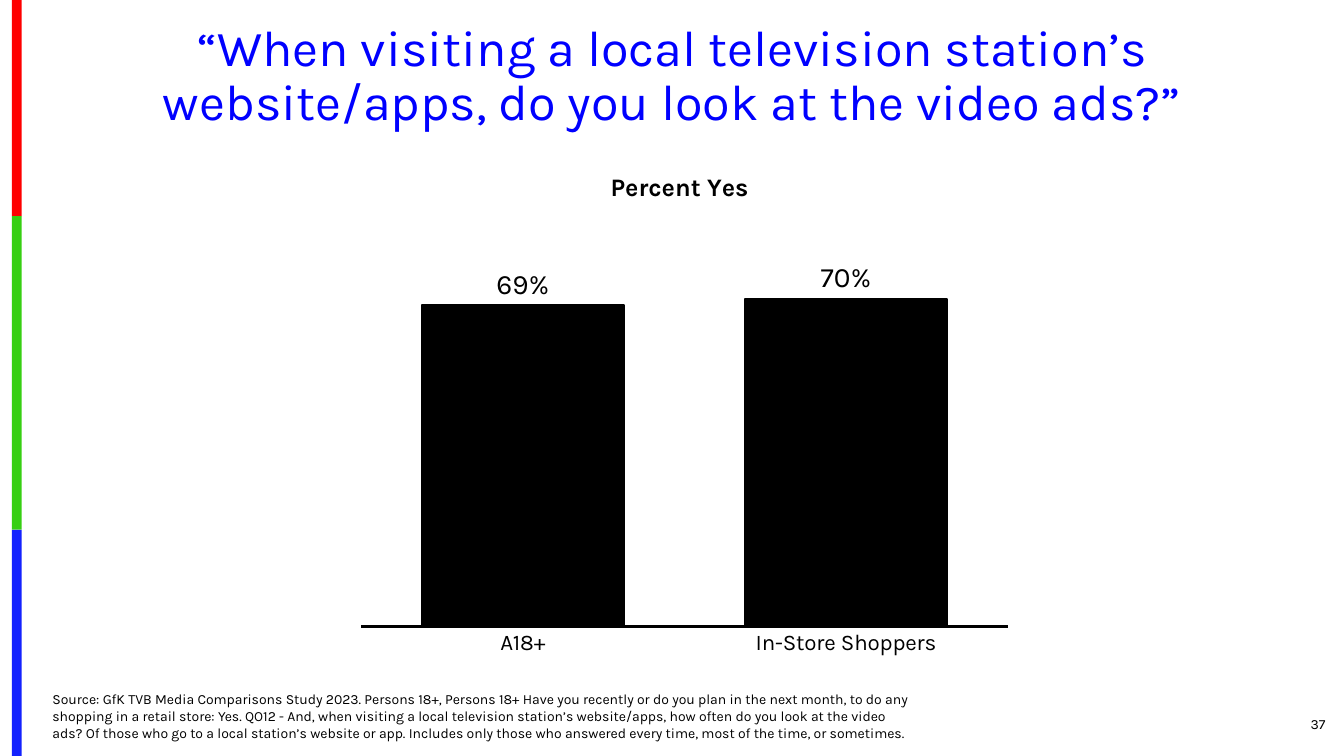
import pptx
import pptx.chart.data
import pptx.dml.color
import pptx.enum.chart
import pptx.enum.shapes
import pptx.enum.text
import pptx.oxml
import pptx.oxml.ns
import pptx.util

Cm = pptx.util.Cm
Pt = pptx.util.Pt
RGBColor = pptx.dml.color.RGBColor
Align = pptx.enum.text.PP_ALIGN
Anchor = pptx.enum.text.MSO_ANCHOR

RED = RGBColor(0xFE, 0x00, 0x00)
GREEN = RGBColor(0x36, 0xCF, 0x12)
STRIPE_BLUE = RGBColor(0x13, 0x22, 0xFE)
TITLE_BLUE = RGBColor(0x00, 0x00, 0xFF)
BLACK = RGBColor(0x00, 0x00, 0x00)
FACE = "Karla"

QUESTION = "“When visiting a local television station’s website/apps, do you look at the video ads?”"
SOURCE = (
    "Source: GfK TVB Media Comparisons Study 2023. Persons 18+, Persons 18+ "
    "Have you recently or do you plan in the next month, to do any shopping in a retail store: Yes. "
    "QO12 - And, when visiting a local television station’s website/apps, "
    "how often do you look at the video ads? "
    "Of those who go to a local station’s website or app. "
    "Includes only those who answered every time, most of the time, or sometimes."
)
PAGE = "37"
CHART_TITLE = "Percent Yes"
YES_SHARE = {"A18+": 0.69, "In-Store Shoppers": 0.7}
STRIPES = [(RED, 5.45), (GREEN, 7.9), (STRIPE_BLUE, 5.7)]

TEXTS = [
    (QUESTION, (1.17, 0.43, 31.55, 3.02), 36, TITLE_BLUE, Align.CENTER, Anchor.MIDDLE, 0.9),
    (PAGE, (30.91, 17.73, 2.74, 1.02), 10, BLACK, Align.RIGHT, Anchor.MIDDLE, 1.0),
    (SOURCE, (1.07, 17.25, 22.23, 1.55), 10, BLACK, Align.LEFT, Anchor.BOTTOM, 1.0),
]


def style(font, size, color=BLACK, bold=False):
    font.name = FACE
    font.size = Pt(size)
    font.bold = bold
    font.color.rgb = color


def add_text(slide, words, box, size, color, align, anchor, spacing):
    frame = slide.shapes.add_textbox(*map(Cm, box)).text_frame
    frame.word_wrap = True
    frame.vertical_anchor = anchor
    paragraph = frame.paragraphs[0]
    paragraph.alignment = align
    paragraph.line_spacing = spacing
    run = paragraph.add_run()
    run.text = words
    style(run.font, size, color)


def place(element, index, **settings):
    for old in element.findall(pptx.oxml.ns.qn("c:layout")):
        element.remove(old)
    entries = "".join(f'<c:{key} val="{value}"/>' for key, value in settings.items())
    element.insert(index, pptx.oxml.parse_xml(
        f'<c:layout {pptx.oxml.ns.nsdecls("c")}>'
        f"<c:manualLayout>{entries}</c:manualLayout></c:layout>"
    ))


def add_share_chart(slide):
    shares = pptx.chart.data.CategoryChartData(number_format="0%")
    shares.categories = list(YES_SHARE)
    shares.add_series("Series 1", list(YES_SHARE.values()))
    chart = slide.shapes.add_chart(
        pptx.enum.chart.XL_CHART_TYPE.COLUMN_CLUSTERED,
        Cm(8.26), Cm(3.45), Cm(17.98), Cm(14.55), shares,
    ).chart
    style(chart.font, 10)
    chart.has_legend = False
    chart.has_title = True
    heading = chart.chart_title.text_frame.paragraphs[0].add_run()
    heading.text = CHART_TITLE
    style(heading.font, 18, bold=True)
    chart.chart_title.include_in_layout = False

    groups = chart.category_axis
    groups.major_tick_mark = pptx.enum.chart.XL_TICK_MARK.NONE
    style(groups.tick_labels.font, 16)
    groups.format.line.color.rgb = BLACK
    groups.format.line.width = Pt(1.5)

    percent = chart.value_axis
    percent.minimum_scale = 0.2
    percent.maximum_scale = 0.8
    percent.has_major_gridlines = False
    percent.visible = False

    columns = chart.plots[0]
    columns.gap_width = 60
    columns.vary_by_categories = False
    yes = columns.series[0]
    yes.format.fill.solid()
    yes.format.fill.fore_color.rgb = BLACK
    yes.format.line.color.rgb = BLACK
    yes.format.line.width = Pt(1.5)
    labels = yes.data_labels
    labels.show_value = True
    labels.number_format = "0%"
    labels.number_format_is_linked = False
    labels.position = pptx.enum.chart.XL_LABEL_POSITION.OUTSIDE_END
    style(labels.font, 20)

    place(chart.chart_title._element, 1, xMode="edge", yMode="edge", x=0.39, y=0.05)
    plot_area = chart._chartSpace.chart.plotArea
    place(plot_area, 0, layoutTarget="inner", xMode="edge", yMode="edge",
          x=0.047, y=0.167, w=0.906, h=0.681)


def main():
    deck = pptx.Presentation()
    deck.slide_width = Cm(33.87)
    deck.slide_height = Cm(19.05)
    slide = deck.slides.add_slide(deck.slide_layouts[6])

    top = 0
    for color, height in STRIPES:
        stripe = slide.shapes.add_shape(
            pptx.enum.shapes.MSO_SHAPE.RECTANGLE, Cm(0.3), Cm(top), Cm(0.25), Cm(height))
        stripe.shadow.inherit = False
        stripe.fill.solid()
        stripe.fill.fore_color.rgb = color
        stripe.line.fill.background()
        top += height

    for entry in TEXTS:
        add_text(slide, *entry)
    add_share_chart(slide)
    deck.save("out.pptx")


if __name__ == "__main__":
    main()
